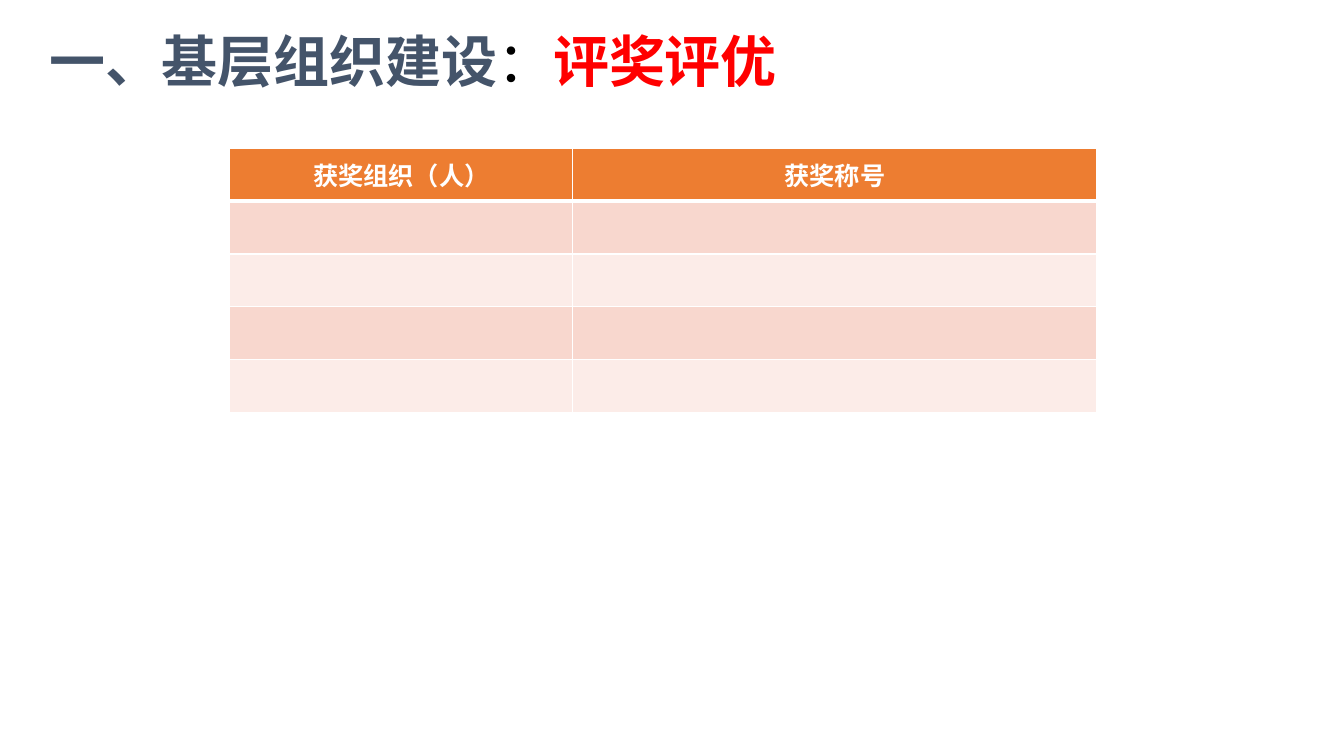
from lxml.etree import SubElement
from pptx import Presentation
from pptx.dml.color import RGBColor
from pptx.enum.text import MSO_ANCHOR as Anchor, PP_ALIGN as Align
from pptx.oxml.ns import qn
from pptx.util import Inches, Pt

COLORS = {
    "white": "FFFFFF",
    "header": "ED7D31",
    "odd_row": "F8D7CE",
    "even_row": "FCECE8",
    "heading": "44546A",
    "colon": "000000",
    "topic": "FF0000",
}
CJK_FONT = "Noto Sans CJK SC"
SLIDE_WIDTH, SLIDE_HEIGHT = Inches(13.33), Inches(7.5)
COLUMN_WIDTHS = [Inches(3.4), Inches(5.2)]
ROW_HEIGHT = Inches(0.525)
ROW_COUNT = 5
HEADINGS = ["获奖组织（人）", "获奖称号"]
TITLE_PARTS = [
    ("一、基层组织建设", "heading", True),
    ("：", "colon", False),
    ("评奖评优", "topic", True),
]


def color(key):
    return RGBColor.from_string(COLORS[key])


def style_run(run, size, color_key, bold, latin):
    run.font.size = Pt(size)
    run.font.bold = bold
    run.font.color.rgb = color(color_key)
    run.font.name = latin
    SubElement(run.font._element, qn("a:ea"), typeface=CJK_FONT)


def add_title(slide):
    title = slide.shapes.title
    title.left, title.top = Inches(0.29), Inches(0.21)
    title.width, title.height = Inches(11.68), Inches(0.77)
    frame = title.text_frame
    frame.word_wrap = True
    frame.vertical_anchor = Anchor.MIDDLE
    paragraph = frame.paragraphs[0]
    paragraph.alignment = Align.LEFT
    paragraph._p.get_or_add_pPr().set("marL", str(Inches(0.1)))
    for wording, color_key, bold in TITLE_PARTS:
        run = paragraph.add_run()
        run.text = wording
        style_run(run, 40, color_key, bold, CJK_FONT)


def set_borders(cell, top, bottom):
    properties = cell._tc.get_or_add_tcPr()
    for side, points in (("L", 1), ("R", 1), ("T", top), ("B", bottom)):
        line = SubElement(properties, qn(f"a:ln{side}"), w=str(Pt(points)))
        fill = SubElement(line, qn("a:solidFill"))
        SubElement(fill, qn("a:srgbClr"), val=COLORS["white"])


def format_cell(cell, row):
    set_borders(cell, top=3 if row == 1 else 1, bottom=3 if row == 0 else 1)
    cell.vertical_anchor = Anchor.MIDDLE
    cell.fill.solid()
    shade = "header" if row == 0 else "odd_row" if row % 2 else "even_row"
    cell.fill.fore_color.rgb = color(shade)


def add_awards_table(slide):
    awards = slide.shapes.add_table(
        ROW_COUNT, len(HEADINGS), Inches(2.28), Inches(1.47),
        sum(COLUMN_WIDTHS), ROW_HEIGHT * ROW_COUNT,
    ).table
    for column, width in zip(awards.columns, COLUMN_WIDTHS):
        column.width = width
    for row in range(ROW_COUNT):
        awards.rows[row].height = ROW_HEIGHT
        for column in range(len(HEADINGS)):
            format_cell(awards.cell(row, column), row)
    for column, heading in enumerate(HEADINGS):
        paragraph = awards.cell(0, column).text_frame.paragraphs[0]
        paragraph.text = heading
        paragraph.alignment = Align.CENTER
        style_run(paragraph.runs[0], 18, "white", True, "Arial")


def main():
    deck = Presentation()
    deck.slide_width, deck.slide_height = SLIDE_WIDTH, SLIDE_HEIGHT
    slide = deck.slides.add_slide(deck.slide_layouts.get_by_name("Title Only"))
    add_awards_table(slide)
    add_title(slide)
    deck.save("out.pptx")


if __name__ == "__main__":
    main()
